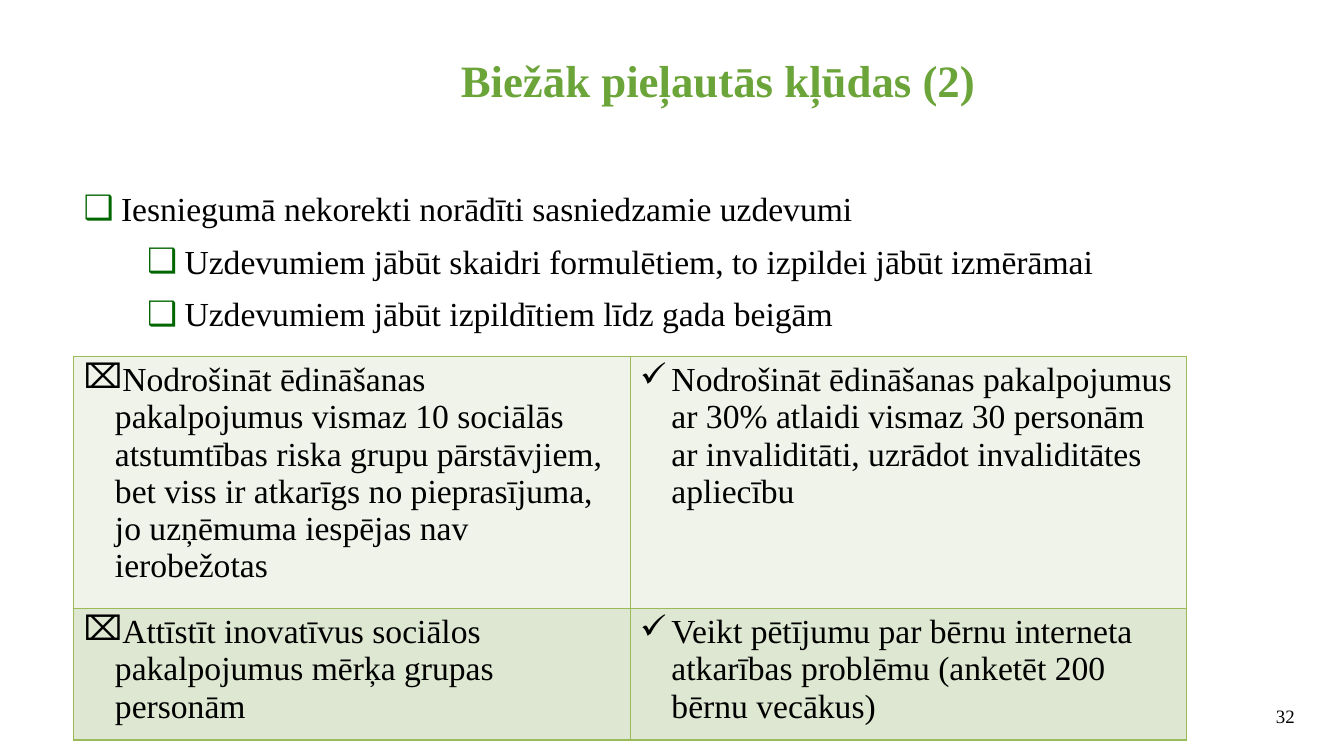
from dataclasses import dataclass
from typing import Any

from lxml import etree
from pptx import Presentation
from pptx.dml.color import RGBColor
from pptx.enum.text import MSO_ANCHOR, MSO_AUTO_SIZE, PP_ALIGN
from pptx.oxml.ns import qn
from pptx.util import Inches, Pt

CENTER, RIGHT = PP_ALIGN.CENTER, PP_ALIGN.RIGHT
TOP, MIDDLE = MSO_ANCHOR.TOP, MSO_ANCHOR.MIDDLE
NO_AUTOFIT = MSO_AUTO_SIZE.NONE

LEAF_GREEN = RGBColor(0x6B, 0xA4, 0x39)
BULLET_GREEN = RGBColor(0x00, 0x66, 0x00)
BORDER_GREEN = RGBColor(0x9B, 0xBB, 0x59)
PALE_ROW = RGBColor(0xEF, 0xF3, 0xEA)
DEEP_ROW = RGBColor(0xDE, 0xE7, 0xD1)
BLACK = RGBColor(0x00, 0x00, 0x00)

SLIDE_WIDTH, SLIDE_HEIGHT = Inches(13.33), Inches(7.5)
FONT = "Times New Roman"
TITLE_FORMAT = {"name": FONT, "size": Pt(32), "bold": True}
TEXT_FORMAT = {"name": FONT, "size": Pt(24)}
NUMBER_FORMAT = {"name": FONT, "size": Pt(13.5)}


def across(percent: float) -> int:
    return round(SLIDE_WIDTH * percent / 100)


def down(percent: float) -> int:
    return round(SLIDE_HEIGHT * percent / 100)


@dataclass(frozen=True)
class Frame:
    left: float
    top: float
    width: float
    height: float

    def lengths(self) -> dict[str, int]:
        return {
            "left": across(self.left),
            "top": down(self.top),
            "width": across(self.width),
            "height": down(self.height),
        }


@dataclass(frozen=True)
class Point:
    text: str
    level: int = 0


@dataclass(frozen=True)
class Comparison:
    wrong: str
    right: str
    height: float
    fill: RGBColor


TITLE_FRAME = Frame(33, 6.27, 40.88, 8.53)
BODY_FRAME = Frame(5.48, 24.13, 91.9, 25.87)
TABLE_FRAME = Frame(5.48, 47.2, 82.82, 46.93)
NUMBER_FRAME = Frame(79.59, 92.53, 17.48, 5.33)

POINTS = [
    Point("Iesniegumā nekorekti norādīti sasniedzamie uzdevumi"),
    Point("Uzdevumiem jābūt skaidri formulētiem, to izpildei jābūt izmērāmai", 1),
    Point("Uzdevumiem jābūt izpildītiem līdz gada beigām", 1),
]
COMPARISONS = [
    Comparison(
        "Nodrošināt ēdināšanas pakalpojumus vismaz 10 sociālās atstumtības riska grupu "
        "pārstāvjiem, bet viss ir atkarīgs no pieprasījuma, jo uzņēmuma iespējas nav ierobežotas",
        "Nodrošināt ēdināšanas pakalpojumus ar 30% atlaidi vismaz 30 personām "
        "ar invaliditāti, uzrādot invaliditātes apliecību",
        30.8,
        PALE_ROW,
    ),
    Comparison(
        "Attīstīt inovatīvus sociālos pakalpojumus mērķa grupas personām",
        "Veikt pētījumu par bērnu interneta atkarības problēmu (anketēt 200 bērnu vecākus)",
        16.13,
        DEEP_ROW,
    ),
]


def apply(target: Any, values: dict[str, Any]) -> None:
    for name, value in values.items():
        setattr(target, name, value)


def write(para: Any, text: str, font_format: dict[str, Any], color: RGBColor = BLACK) -> None:
    span = para.add_run()
    span.text = text
    apply(span.font, font_format)
    span.font.color.rgb = color


def add_bullet(para: Any, mark: str, color: RGBColor, margin: float, hanging: float) -> None:
    properties = para._p.get_or_add_pPr()
    properties.set("marL", str(Inches(margin)))
    properties.set("indent", str(-Inches(hanging)))
    bullet_color = etree.SubElement(properties, qn("a:buClr"))
    etree.SubElement(bullet_color, qn("a:srgbClr"), val=str(color))
    etree.SubElement(properties, qn("a:buChar"), char=mark)


def add_borders(cell: Any) -> None:
    properties = cell._tc.get_or_add_tcPr()
    for side in ("lnL", "lnR", "lnT", "lnB"):
        line = etree.SubElement(properties, qn(f"a:{side}"), w=str(Pt(1)))
        fill = etree.SubElement(line, qn("a:solidFill"))
        etree.SubElement(fill, qn("a:srgbClr"), val=str(BORDER_GREEN))


def draw_title(page: Any) -> None:
    title = page.shapes.title
    apply(title, TITLE_FRAME.lengths())
    apply(title.text_frame, {"auto_size": NO_AUTOFIT, "vertical_anchor": MIDDLE})
    para = title.text_frame.paragraphs[0]
    para.alignment = CENTER
    write(para, "Biežāk pieļautās kļūdas (2)", TITLE_FORMAT, LEAF_GREEN)


def draw_points(page: Any) -> None:
    body = page.placeholders[1]
    apply(body, BODY_FRAME.lengths())
    frame = body.text_frame
    apply(frame, {"auto_size": NO_AUTOFIT, "vertical_anchor": TOP, "word_wrap": True})
    for index, point in enumerate(POINTS):
        para = frame.add_paragraph() if index else frame.paragraphs[0]
        add_bullet(para, "❑", BULLET_GREEN, 0.37 + 0.63 * point.level, 0.37)
        apply(para, {"level": point.level, "space_before": Pt(9 if index else 0)})
        write(para, point.text, TEXT_FORMAT)


def draw_comparisons(page: Any) -> None:
    table = page.shapes.add_table(len(COMPARISONS), 2, **TABLE_FRAME.lengths()).table
    apply(table, {"first_row": False, "horz_banding": False})
    for row, comparison in zip(table.rows, COMPARISONS):
        row.height = down(comparison.height)
        entries = (("⌧", comparison.wrong), ("✓", comparison.right))
        for cell, (mark, text) in zip(row.cells, entries):
            add_borders(cell)
            cell.fill.solid()
            cell.fill.fore_color.rgb = comparison.fill
            para = cell.text_frame.paragraphs[0]
            add_bullet(para, mark, BLACK, 0.31, 0.31)
            write(para, text, TEXT_FORMAT)


def draw_number(page: Any) -> None:
    box = page.shapes.add_textbox(**NUMBER_FRAME.lengths())
    box.text_frame.word_wrap = True
    para = box.text_frame.paragraphs[0]
    para.alignment = RIGHT
    write(para, "32", NUMBER_FORMAT)


def main() -> None:
    deck = Presentation()
    apply(deck, {"slide_width": SLIDE_WIDTH, "slide_height": SLIDE_HEIGHT})
    page = deck.slides.add_slide(deck.slide_layouts[1])
    draw_title(page)
    draw_points(page)
    draw_number(page)
    draw_comparisons(page)
    deck.save("out.pptx")


if __name__ == "__main__":
    main()
